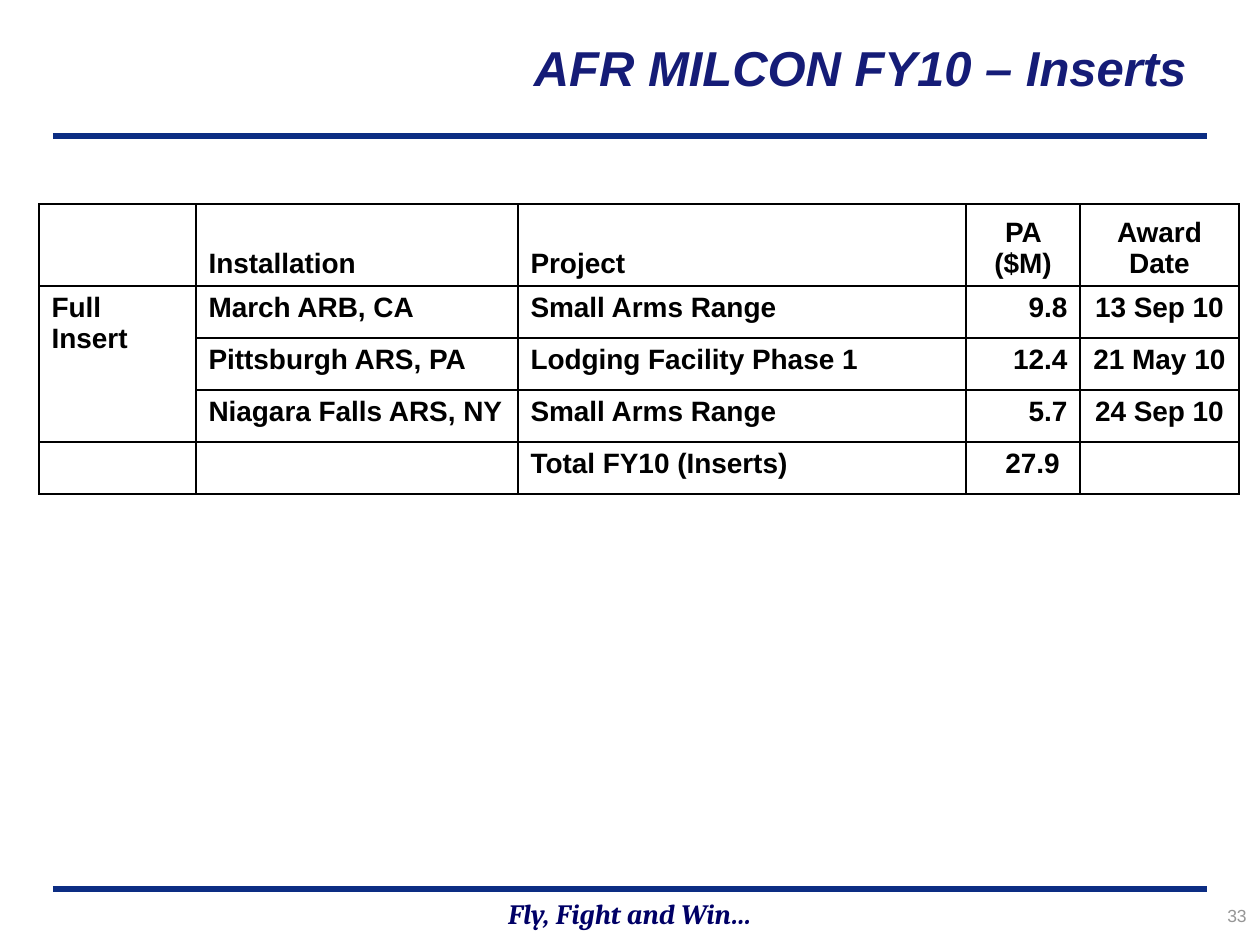
from lxml import etree
from pptx import Presentation
from pptx.dml.color import RGBColor
from pptx.enum.shapes import MSO_CONNECTOR
from pptx.enum.text import MSO_ANCHOR, PP_ALIGN
from pptx.oxml import parse_xml
from pptx.oxml.ns import nsdecls, qn
from pptx.util import Pt

LEFT, MID, RIGHT = PP_ALIGN.LEFT, PP_ALIGN.CENTER, PP_ALIGN.RIGHT
TOP, MIDDLE, LOW = MSO_ANCHOR.TOP, MSO_ANCHOR.MIDDLE, MSO_ANCHOR.BOTTOM
STRAIGHT = MSO_CONNECTOR.STRAIGHT
INK = {"rule": "0C2D83", "title": "151C77", "motto": "000066",
       "page": "969696", "text": "000000"}

COLS = [157, 322, 448, 114, 159]
ROWS = [82] + [52] * 4
CELLS = [
    ["", "Installation", "Project", "PA ($M)", "Award Date"],
    ["Full Insert", "March ARB, CA", "Small Arms Range", "9.8", "13 Sep 10"],
    ["", "Pittsburgh ARS, PA", "Lodging Facility Phase 1", "12.4", "21 May 10"],
    ["", "Niagara Falls ARS, NY", "Small Arms Range", "5.7", "24 Sep 10"],
    ["", "", "Total FY10 (Inserts)", "27.9 ", ""],
]
ALIGNS = [LEFT, LEFT, LEFT, RIGHT, MID]


def px(n):
    return round(n * 914400 / 126)


def write(frame, text, size, ink, align, face="Arial", bold=True, slant=False):
    frame.text = text
    para = frame.paragraphs[0]
    para.alignment = align
    para.space_before = Pt(0)
    for run in para.runs:
        font = run.font
        font.name, font.size = face, Pt(size)
        font.bold, font.italic = bold, slant
        font.color.rgb = RGBColor.from_string(INK[ink])


def rule(slide, x, y, w):
    line = slide.shapes.add_connector(STRAIGHT, px(x), px(y), px(x + w), px(y))
    line.line.color.rgb = RGBColor.from_string(INK["rule"])
    line.line.width = Pt(3)
    etree.SubElement(line._element.spPr, qn("a:effectLst"))


def label(slide, x, y, w, h, anchor):
    box = slide.shapes.add_textbox(px(x), px(y), px(w), px(h))
    frame = box.text_frame
    frame.word_wrap = True
    frame.vertical_anchor = anchor
    return frame


def header(slide, x, y, w, h):
    title = slide.shapes.title
    title.left, title.top = px(x + 52), px(y)
    title.width, title.height = px(w - 60), px(h - 23)
    title.text_frame.vertical_anchor = MIDDLE
    write(title.text_frame, "AFR MILCON FY10 – Inserts", 28, "title", RIGHT,
          slant=True)
    rule(slide, x, y + h, w)


def border(cell):
    props = cell._tc.get_or_add_tcPr()
    for n, side in enumerate(("lnL", "lnR", "lnT", "lnB")):
        props.insert(n, parse_xml(
            f'<a:{side} {nsdecls("a")} w="12700"><a:solidFill>'
            f'<a:srgbClr val="{INK["text"]}"/></a:solidFill></a:{side}>'))


def grid(slide, x, y):
    frame = slide.shapes.add_table(len(ROWS), len(COLS), px(x), px(y),
                                   px(sum(COLS)), px(sum(ROWS)))
    table = frame.table
    table.first_row = table.horz_banding = False
    for col, w in zip(table.columns, COLS):
        col.width = px(w)
    for row, h in zip(table.rows, ROWS):
        row.height = px(h)
    for r, line in enumerate(CELLS):
        for c, text in enumerate(line):
            cell = table.cell(r, c)
            cell.fill.background()
            border(cell)
            cell.vertical_anchor = TOP if r else LOW
            align = MID if r == 0 and c > 2 else ALIGNS[c]
            if text:
                write(cell.text_frame, text, 16, "text", align)
    # One label covers the three insert rows
    table.cell(1, 0).merge(table.cell(3, 0))


def footer(slide, x, y, w):
    rule(slide, x + 53, y, w - 106)
    motto = label(slide, x, y + 1, w, 47, MIDDLE)
    write(motto, "Fly, Fight and Win…", 16, "motto", MID, "Cambria", slant=True)
    page = label(slide, x + w - 159, y + 10, 158, 42, TOP)
    write(page, "33", 10, "page", RIGHT, bold=False)


def main():
    deck = Presentation()
    deck.slide_width, deck.slide_height = px(1260), px(945)
    slide = deck.slides.add_slide(deck.slide_layouts[5])
    footer(slide, 0, 889, 1260)
    header(slide, 53, 21, 1154, 115)
    grid(slide, 39, 204)
    deck.save("out.pptx")


if __name__ == "__main__":
    main()
